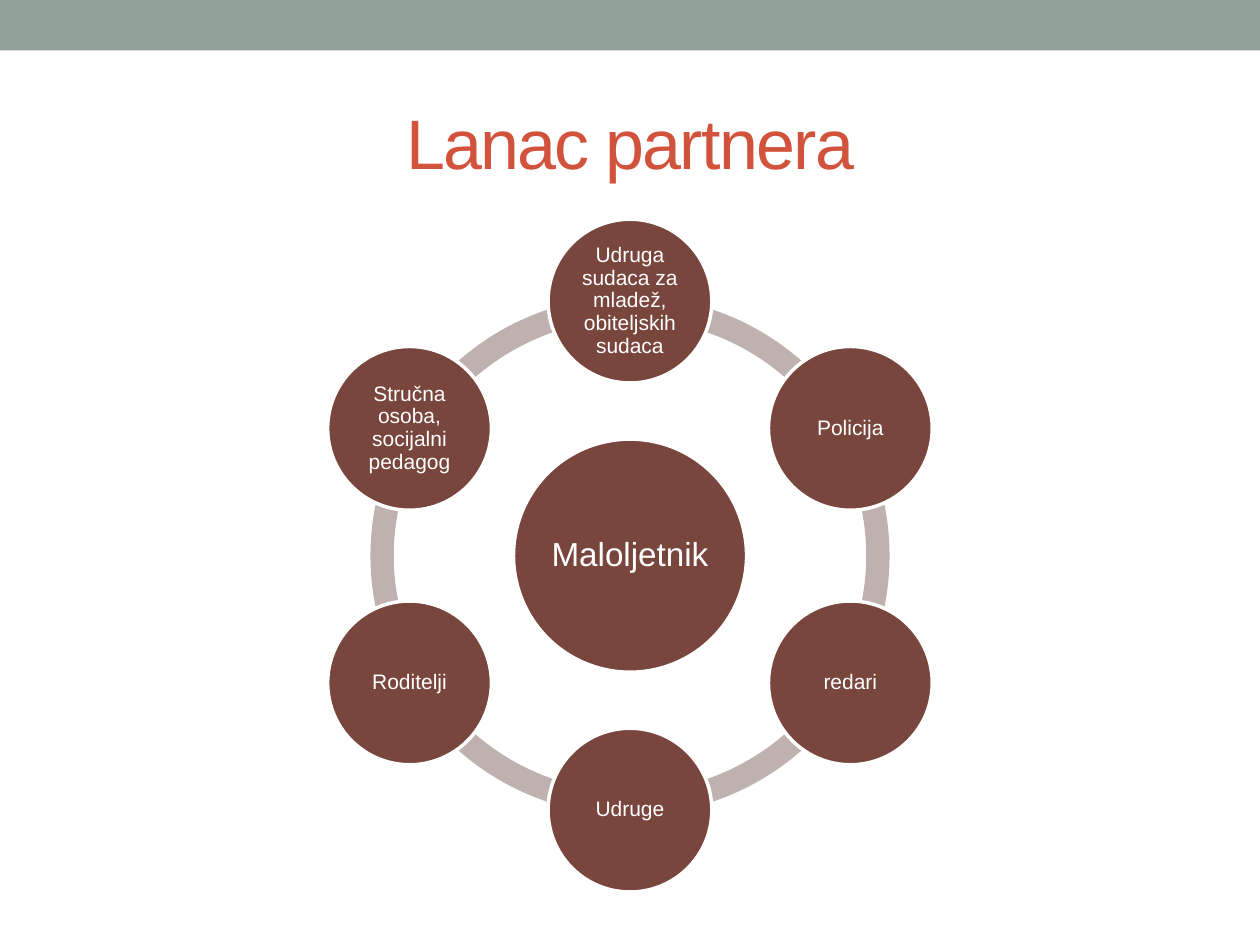
import math

import pptx
import pptx.dml.color
import pptx.enum.shapes
import pptx.enum.text
import pptx.util

THEME = {
    "font": "Arial",
    "band": "93A299", "title": "D2533C", "node": "79463D", "ring": "BEB1AF", "paper": "FFFFFF",
    "title_size": 40, "hub_size": 19, "partner_size": 12,
}
SHAPE = pptx.enum.shapes.MSO_SHAPE
Inches, Pt = pptx.util.Inches, pptx.util.Pt


def write(s, text, *, size, color, spacing=None, line_spacing=None, inset=None):
    """Put one centred paragraph into a shape or placeholder."""
    tf = s.text_frame
    tf.word_wrap = True
    tf.auto_size = pptx.enum.text.MSO_AUTO_SIZE.NONE
    tf.vertical_anchor = pptx.enum.text.MSO_ANCHOR.MIDDLE
    if inset is not None:
        tf.margin_left = tf.margin_right = tf.margin_top = tf.margin_bottom = Inches(inset)
    p = tf.paragraphs[0]
    p.alignment = pptx.enum.text.PP_ALIGN.CENTER
    if line_spacing:
        p.line_spacing = line_spacing
    r = p.add_run()
    r.text = text
    r.font.name = THEME["font"]
    r.font.size = Pt(size)
    r.font.color.rgb = pptx.dml.color.RGBColor.from_string(color)
    if spacing is not None:
        r.font._element.set("spc", str(round(spacing * 100)))


def add_shape(kind, left, top, width, height, fill, line=None):
    s = slide.shapes.add_shape(kind, *(Inches(v) for v in (left, top, width, height)))
    s.shadow.inherit = False
    s.fill.solid()
    s.fill.fore_color.rgb = pptx.dml.color.RGBColor.from_string(fill)
    if line:
        s.line.color.rgb = pptx.dml.color.RGBColor.from_string(line)
        s.line.width = Pt(2)
    else:
        s.line.fill.background()
    return s


prs = pptx.Presentation()
W, H = 10, 7.5
prs.slide_width, prs.slide_height = Inches(W), Inches(H)
slide = prs.slides.add_slide(prs.slide_layouts.get_by_name("Title Only"))

add_shape(SHAPE.RECTANGLE, 0, 0, W, 0.4, THEME["band"])

title = slide.shapes.title
title.left, title.top = Inches(0.05 * W), Inches(0.58)
title.width, title.height = Inches(0.9 * W), Inches(1.08)
write(title, "Lanac partnera", size=THEME["title_size"], color=THEME["title"], spacing=-1)

# Partners run clockwise from the top
partners = [
    "Udruga sudaca za mladež, obiteljskih sudaca",
    "Policija",
    "redari",
    "Udruge",
    "Roditelji",
    "Stručna osoba, socijalni pedagog",
]
cx, cy = W / 2, 4.41
orbit, ring, hub, node = 2.02, 4.12, 1.85, 1.3  # orbit is a radius, the rest diameters
step = 360 / len(partners)
angles = [i * step - 90 for i in range(len(partners))]

for angle in angles:
    arc = add_shape(SHAPE.BLOCK_ARC, cx - ring / 2, cy - ring / 2, ring, ring, THEME["ring"])
    # Angles are stored in 60000ths of a degree, adjustments in 100000ths
    arc.adjustments[0] = angle % 360 * 0.6
    arc.adjustments[1] = (angle + step) % 360 * 0.6
    arc.adjustments[2] = 0.045

circles = [("Maloljetnik", cx, cy, hub, THEME["hub_size"], 0.03)]
for text, angle in zip(partners, angles):
    x = cx + orbit * math.cos(math.radians(angle))
    y = cy + orbit * math.sin(math.radians(angle))
    circles.append((text, x, y, node, THEME["partner_size"], 0.02))

for text, x, y, d, size, inset in circles:
    s = add_shape(SHAPE.OVAL, x - d / 2, y - d / 2, d, d, THEME["node"], THEME["paper"])
    write(s, text, size=size, color=THEME["paper"], line_spacing=0.9, inset=inset)

prs.save("out.pptx")
